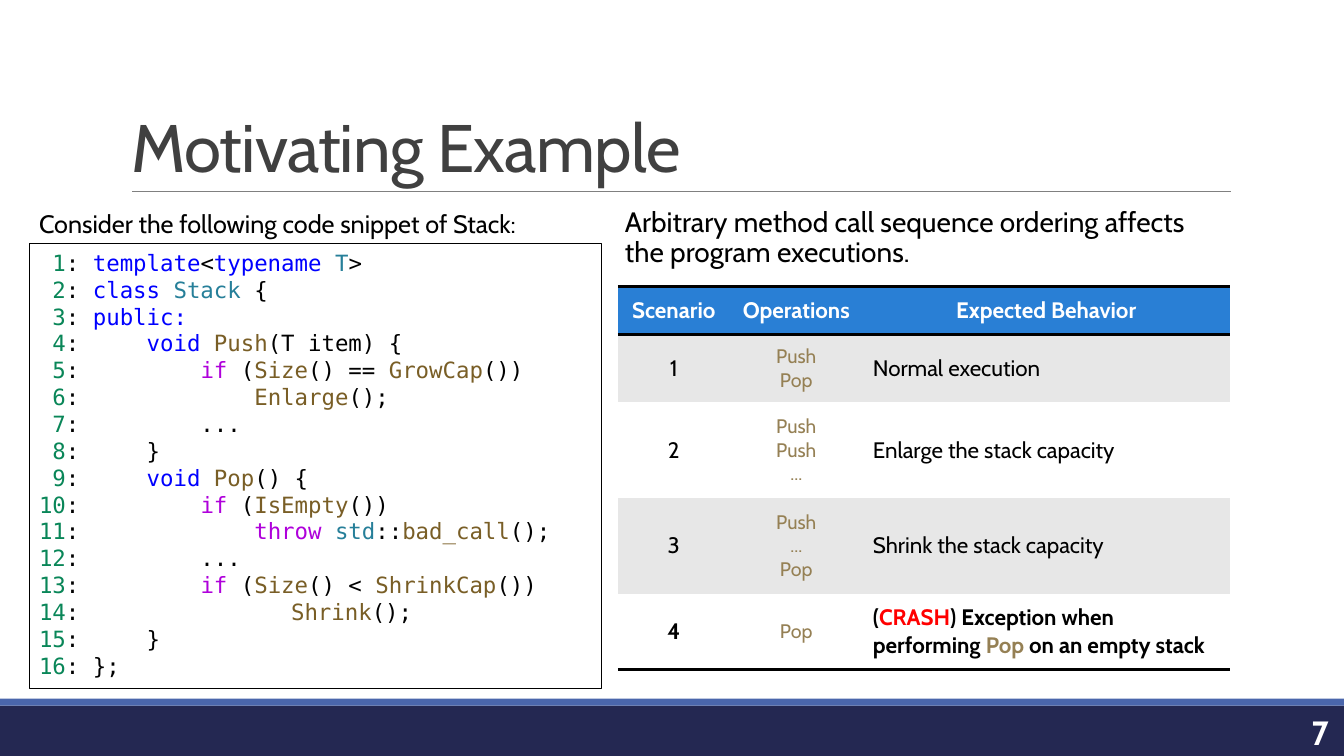
"""Build the slide on call order in a stack."""
from lxml import etree
from pptx import Presentation
from pptx.dml.color import RGBColor
from pptx.enum.shapes import MSO_CONNECTOR, MSO_SHAPE
from pptx.enum.text import MSO_ANCHOR, MSO_AUTO_SIZE, PP_ALIGN
from pptx.oxml.ns import qn
from pptx.util import Inches, Pt

LEFT, MID, RIGHT = PP_ALIGN.LEFT, PP_ALIGN.CENTER, PP_ALIGN.RIGHT
TOP, MIDDLE, BOTTOM = MSO_ANCHOR.TOP, MSO_ANCHOR.MIDDLE, MSO_ANCHOR.BOTTOM
RECT, LINE, FIXED = MSO_SHAPE.RECTANGLE, MSO_CONNECTOR.STRAIGHT, MSO_AUTO_SIZE.NONE
WIDE, HIGH = Inches(13.333), Inches(7.5)
SANS, MONO = "Cabin", "DejaVu Sans Mono"
HARD = chr(160)
PLAIN = "{2D5ABB26-0587-4C30-8999-92F81FD0307C}"
HUES = {
    "black": "000000", "white": "FFFFFF", "navy": "242852", "blue": "4A66AC",
    "gray": "808080", "dark": "404040", "head": "297FD5", "band": "E7E7E7",
    "num": "098658", "key": "0000FF", "type": "267F99", "func": "795E26",
    "flow": "AF00DB", "gold": "958054", "red": "FF0000",
}
CODE = [
    (0, "key/template|<|key/typename |type/T|>"),
    (0, "key/class |type/Stack| {"),
    (0, "key/public:"),
    (1, "key/void |func/Push|(T item) {"),
    (2, "flow/if| (|func/Size|() == |func/GrowCap|())"),
    (3, "func/Enlarge|();"),
    (2, "..."),
    (1, "}"),
    (1, "key/void |func/Pop|() {"),
    (2, "flow/if| (|func/IsEmpty|())"),
    (3, "flow/throw |type/std|::|func/bad_call|();"),
    (2, "..."),
    (2, "flow/if| (|func/Size|() < |func/ShrinkCap|())"),
    (2, "\t\t|func/Shrink|();"),
    (1, "}"),
    (0, "};"),
]
HEADS = ["Scenario", "Operations", "Expected Behavior"]
CASES = [
    ("1", "Push\nPop", "Normal execution"),
    ("2", "Push\nPush\n...", "Enlarge the stack capacity"),
    ("3", "Push\n...\nPop", "Shrink the stack capacity"),
    ("4", "Pop", "(|red/CRASH|) Exception when performing |gold/Pop| on an empty stack"),
]
COLS = [8.33, 9.9, 27.3]
ROWS = [6.4, 8.93, 12.67, 12.67, 10]


def across(share):
    """Turn a percentage of the slide's width into a length."""
    return int(WIDE * share / 100)


def down(share):
    """Turn a percentage of the slide's height into a length."""
    return int(HIGH * share / 100)


def area(x, y, w, h):
    """Turn four percentages into left, top, width and height."""
    return across(x), down(y), across(w), down(h)


def hue(name):
    """Look up a colour by name."""
    return RGBColor.from_string(HUES[name])


def write(frame, text, size, tone="black", font=SANS, bold=False, align=LEFT,
          lead=1.0, before=0, after=0, track=0):
    """Fill a frame; '|' parts the runs and 'tone/' colours one of them."""
    for i, line in enumerate(text.split("\n")):
        para = frame.add_paragraph() if i else frame.paragraphs[0]
        para.alignment, para.line_spacing = align, lead
        para.space_before, para.space_after = Pt(before), Pt(after)
        for part in line.split("|"):
            name, _, words = part.rpartition("/")
            run = para.add_run()
            run.text = words
            run.font.size, run.font.name, run.font.bold = Pt(size), font, bold
            run.font.color.rgb = hue(name or tone)
            if track:
                run.font._element.set("spc", str(track))


def block(slide, spot, fill, edge=None):
    """Draw a rectangle with an optional thin edge."""
    shape = slide.shapes.add_shape(RECT, *area(*spot))
    shape.shadow.inherit = False
    shape.fill.solid()
    shape.fill.fore_color.rgb = hue(fill)
    if edge:
        shape.line.color.rgb = hue(edge)
        shape.line.width = Pt(0.75)
    else:
        shape.line.fill.background()
    return shape


def rule(slide, start, end, y):
    """Draw the thin line under the title."""
    line = slide.shapes.add_connector(
        LINE, across(start), down(y), across(end), down(y))
    line.line.color.rgb = hue("gray")
    line.line.width = Pt(0.5)
    etree.SubElement(line._element.spPr, qn("a:effectLst"))


def label(slide, spot, text, size, wrap=True, anchor=TOP, inset=0.1, **style):
    """Place a text box."""
    frame = slide.shapes.add_textbox(*area(*spot)).text_frame
    frame.word_wrap, frame.vertical_anchor = wrap, anchor
    frame.margin_left = frame.margin_right = Inches(inset)
    write(frame, text, size, **style)


def title(slide, spot, text):
    """Move and format the title placeholder."""
    shape = slide.shapes.title
    shape.left, shape.top, shape.width, shape.height = area(*spot)
    frame = shape.text_frame
    frame.auto_size, frame.vertical_anchor = FIXED, BOTTOM
    write(frame, text, 48, tone="dark", lead=0.85, track=-50)


def listing(slide, spot):
    """Draw the framed and numbered code."""
    frame = block(slide, spot, "white", "black").text_frame
    frame.word_wrap, frame.vertical_anchor = True, TOP
    lines = [f"num/{str(n).rjust(2, HARD)}|: {(HARD + ' ') * 2 * depth}|{code}"
             for n, (depth, code) in enumerate(CODE, 1)]
    write(frame, "\n".join(lines), 16, font=MONO)


def border(cell, side):
    """Add a heavy black border to one side of a cell."""
    props = cell._tc.get_or_add_tcPr()
    line = etree.SubElement(props, qn(f"a:{side}"), w=str(Pt(2)))
    fill = etree.SubElement(line, qn("a:solidFill"))
    etree.SubElement(fill, qn("a:srgbClr"), val=HUES["black"])


def cell_in(cell, text, fill, sides, **style):
    """Format one table cell."""
    for side in sides:
        border(cell, side)
    cell.fill.solid()
    cell.fill.fore_color.rgb = hue(fill)
    cell.vertical_anchor = MIDDLE
    write(cell.text_frame, text, **style)


def grid(slide, x, y):
    """Draw the table of cases."""
    spot = area(x, y, sum(COLS), sum(ROWS))
    table = slide.shapes.add_table(len(ROWS), len(COLS), *spot).table
    table._tbl.tblPr.find(qn("a:tableStyleId")).text = PLAIN
    table.horz_banding = False
    for col, share in zip(table.columns, COLS):
        col.width = across(share)
    for row, share in zip(table.rows, ROWS):
        row.height = down(share)
    for c, text in enumerate(HEADS):
        cell_in(table.cell(0, c), text, "head", ["lnT", "lnB"], size=16,
                tone="white", bold=True, align=MID)
    for r, case in enumerate(CASES, 1):
        last = r == len(CASES)
        fill = "band" if r % 2 else "white"
        looks = [dict(size=16, bold=last, align=MID),
                 dict(size=14, tone="gold", align=MID),
                 dict(size=16, bold=last)]
        for c, (text, look) in enumerate(zip(case, looks)):
            cell_in(table.cell(r, c), text, fill, ["lnB"] if last else [], **look)


def main():
    """Build and save the slide."""
    deck = Presentation()
    deck.slide_width, deck.slide_height = WIDE, HIGH
    slide = deck.slides.add_slide(deck.slide_layouts[5])
    block(slide, (0, 93.33, 100, 6.67), "navy")
    block(slide, (0, 92.4, 100, 0.93), "blue")
    rule(slide, 9.83, 91.58, 25.33)
    title(slide, (9, 4.13, 82.5, 21.2), "Motivating Example")
    label(slide, (46.5, 26.93, 45, 10),
          "Arbitrary method call sequence ordering affects the program executions.",
          20, inset=0, lead=0.9, before=12, after=2)
    label(slide, (88.88, 94.13, 10.72, 5.33), "7", 24, anchor=MIDDLE,
          tone="white", bold=True, align=RIGHT)
    listing(slide, (2.17, 32.27, 42.6, 58.8))
    label(slide, (2.17, 26.93, 38.4, 5.33),
          "Consider the following code snippet of Stack:", 18, wrap=False)
    grid(slide, 45.97, 37.87)
    deck.save("out.pptx")


if __name__ == "__main__":
    main()
